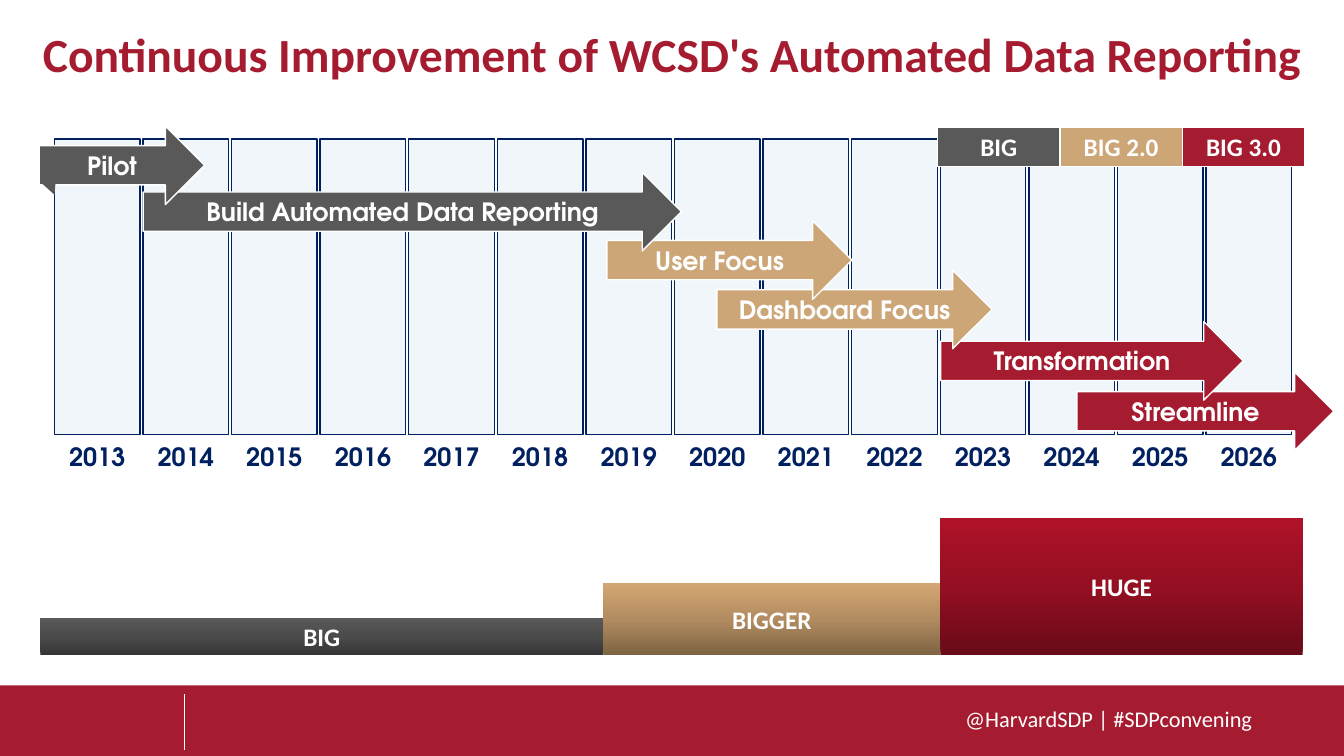
import copy
import pptx
import pptx.dml.color
import pptx.enum.shapes
import pptx.enum.text
import pptx.oxml
import pptx.util

INCH = pptx.util.Inches
KIND = pptx.enum.shapes.MSO_SHAPE
ALIGN = pptx.enum.text.PP_ALIGN
MIDDLE = pptx.enum.text.MSO_ANCHOR.MIDDLE
WIDE, HIGH = 13.33, 7.5
GRAY, TAN, RED, NAVY, WHITE = "595959", "CDA678", "A51C30", "002060", "FFFFFF"
BODY, HEAD = "Calibri", "TeX Gyre Adventor"

YEARS = range(2013, 2027)
TAGS = [("BIG", GRAY), ("BIG 2.0", TAN), ("BIG 3.0", RED)]
# label, share of the width, share of the height, stops from bottom to top
STAGES = [
    ("BIG", 0.446, 0.27, ("353535", "4B4B4B", "595959")),
    ("BIGGER", 0.267, 0.525, ("7D6343", "B28C60", "D3A772")),
    ("HUGE", 0.287, 1, ("680B18", "940F22", "AF1229")),
]
# label, left and top within the box, width, colour
PHASES = [
    ("Streamline", 10.29, 2.44, 2.55, RED),
    ("Transformation", 8.94, 1.94, 3, RED),
    ("Dashboard Focus", 6.72, 1.43, 2.73, TAN),
    ("User Focus", 5.63, 0.94, 2.43, TAN),
    ("Build Automated Data Reporting", 1.03, 0.46, 5.34, GRAY),
    ("Pilot", 0, 0, 1.64, GRAY),
]


def tint(code):
    return pptx.dml.color.RGBColor.from_string(code)


def write(shape, text, color=WHITE, face=BODY, size=18, bold=True, align=ALIGN.CENTER):
    frame = shape.text_frame
    frame.word_wrap = True
    frame.text = text
    para = frame.paragraphs[0]
    para.alignment = align
    font = para.runs[0].font
    font.name, font.size, font.bold = face, pptx.util.Pt(size), bold
    font.color.rgb = tint(color)
    return frame


def block(slide, box, fill=None, line=None, kind=KIND.RECTANGLE):
    shape = slide.shapes.add_shape(kind, *map(INCH, box))
    shape.shadow.inherit = False
    if fill:
        shape.fill.solid()
        shape.fill.fore_color.rgb = tint(fill)
    if line:
        shape.line.color.rgb = tint(line)
        shape.line.width = pptx.util.Pt(1)
    else:
        shape.line.fill.background()
    return shape


def label(slide, box, text, **style):
    return write(slide.shapes.add_textbox(*map(INCH, box)), text, **style)


def shade(shape, codes):
    """Fill with evenly spaced gradient stops running from bottom to top."""
    fill = shape.fill
    fill.gradient()
    fill.gradient_angle = 90
    first = shape._element.spPr.find(".//" + pptx.oxml.ns.qn("a:gs"))
    for _ in codes[2:]:
        first.addnext(copy.deepcopy(first))
    for i, (stop, code) in enumerate(zip(fill.gradient_stops, codes)):
        stop.position = i / (len(codes) - 1)
        stop.color.rgb = tint(code)


def title(slide, box, text):
    head = slide.shapes.title
    head.left, head.top, head.width, head.height = map(INCH, box)
    frame = write(head, text, RED, size=34)
    frame.vertical_anchor = MIDDLE
    frame.paragraphs[0].line_spacing = 0.9


def footer(slide, box):
    left, top, wide, high = box
    block(slide, box, RED)
    frame = label(slide, (left + 8.39, top + 0.15, 4.03, 0.37),
                  "@HarvardSDP | #SDPconvening", size=16, bold=False, align=ALIGN.RIGHT)
    frame.margin_right = 0
    rule = slide.shapes.add_connector(
        pptx.enum.shapes.MSO_CONNECTOR.STRAIGHT,
        *map(INCH, (left + 1.83, top + 0.09, left + 1.83, top + 0.64)))
    rule.line.color.rgb = tint(WHITE)
    rule.line.width = pptx.util.Pt(0.5)
    rule._element.spPr.append(pptx.oxml.parse_xml(
        '<a:effectLst xmlns:a="http://schemas.openxmlformats.org/drawingml/2006/main"/>'))


def lanes(slide, box):
    left, top, wide, high = box
    gap, over = 0.03, 0.2
    step = (wide + gap) / len(YEARS)
    for i, year in enumerate(YEARS):
        x = left + i * step
        block(slide, (x, top, step - gap, high), "F0F6FA", NAVY)
        label(slide, (x - over, top + high + 0.02, step - gap + 2 * over, 0.39),
              str(year), color=NAVY, face=HEAD)


def tags(slide, box):
    left, top, wide, high = box
    step = wide / len(TAGS)
    for i, (text, color) in enumerate(TAGS):
        tag = block(slide, (left + i * step, top, step, high), color, WHITE)
        write(tag, text).vertical_anchor = MIDDLE


def stages(slide, box):
    left, top, wide, high = box
    for text, span, rise, codes in STAGES:
        tall = high * rise
        step = block(slide, (left, top + high - tall, wide * span, tall))
        shade(step, codes)
        write(step, text).vertical_anchor = MIDDLE
        left += wide * span


def phases(slide, box):
    left, top, wide, high = box
    for text, x, y, span, color in PHASES:
        arrow = block(slide, (left + x, top + y, span, 0.78), color, WHITE, KIND.RIGHT_ARROW)
        write(arrow, text, face=HEAD).vertical_anchor = MIDDLE
    fold = block(slide, (left + 0.04, top + 0.53, 0.17, 0.11), GRAY,
                 kind=KIND.ISOSCELES_TRIANGLE)
    fold.rotation = 42.4


def main():
    deck = pptx.Presentation()
    deck.slide_width, deck.slide_height = INCH(WIDE), INCH(HIGH)
    slide = deck.slides.add_slide(deck.slide_layouts[5])
    footer(slide, (0, 6.8, WIDE, HIGH - 6.8))
    title(slide, (0, 0.13, WIDE, 0.87),
          "Continuous Improvement of WCSD's Automated Data Reporting")
    lanes(slide, (0.54, 1.38, 12.27, 2.93))
    tags(slide, (9.3, 1.26, 3.64, 0.39))
    stages(slide, (0.4, 5.14, 12.52, 1.36))
    phases(slide, (0.39, 1.25, 12.84, 3.22))
    deck.save("out.pptx")


if __name__ == "__main__":
    main()
